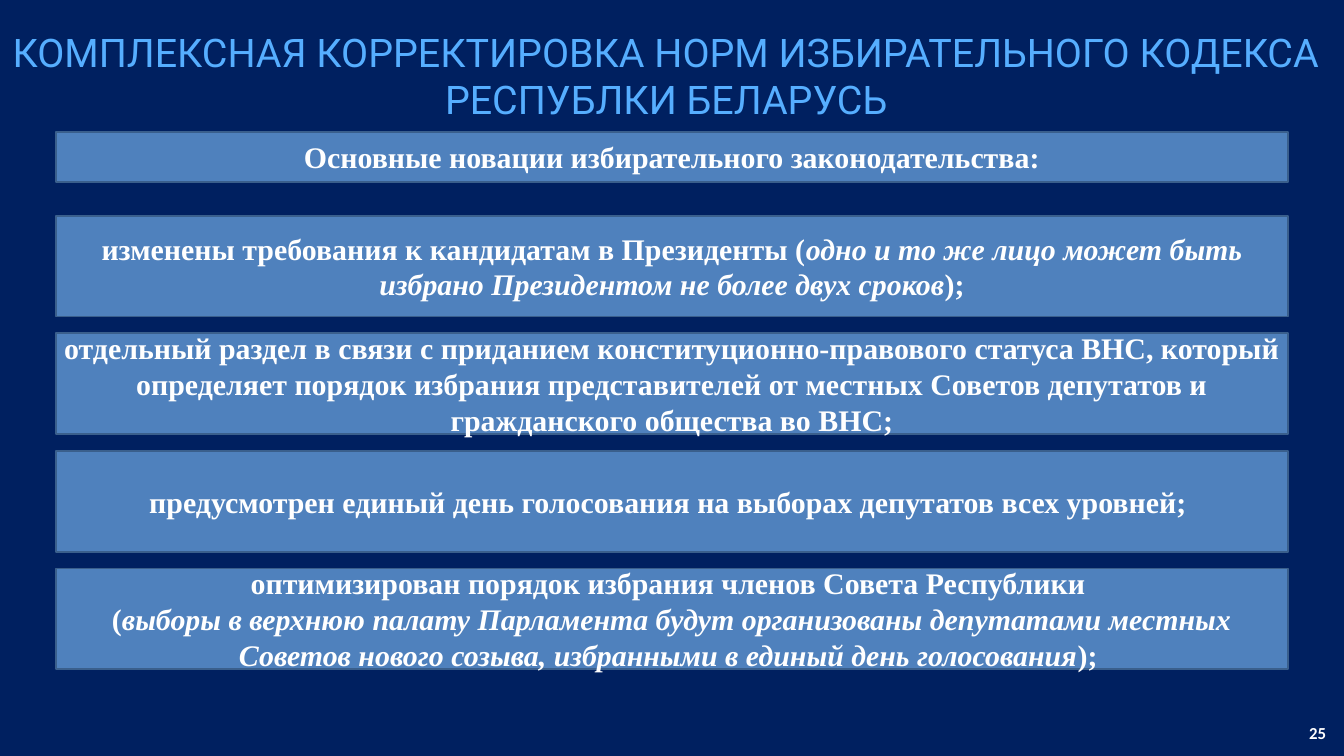
from dataclasses import dataclass

from pptx import Presentation
from pptx.dml.color import RGBColor
from pptx.enum.shapes import MSO_SHAPE
from pptx.enum.text import MSO_ANCHOR, MSO_AUTO_SIZE, PP_ALIGN
from pptx.util import Inches, Pt

RECTANGLE = MSO_SHAPE.RECTANGLE
TOP, MIDDLE = MSO_ANCHOR.TOP, MSO_ANCHOR.MIDDLE
CENTER, RIGHT = PP_ALIGN.CENTER, PP_ALIGN.RIGHT
GROW = MSO_AUTO_SIZE.SHAPE_TO_FIT_TEXT
TITLE_ONLY = 5

WIDTH, HEIGHT = Inches(20), Inches(11.25)
COLUMN, ROW = WIDTH / 24, HEIGHT / 45
HEADER_ROW, HEADER_ROWS = 7.84, 3
FIRST_ROW, CARD_ROWS, CARD_PITCH = 12.84, 6, 7


@dataclass(frozen=True)
class TypeStyle:
    name: str
    size: float
    color: str
    bold: bool = False


@dataclass(frozen=True)
class Theme:
    background: str = "002060"
    fill: str = "4F81BD"
    border: str = "3A5F8C"
    border_width: float = 2
    title: TypeStyle = TypeStyle("Roboto", 42.2, "56AEFF")
    title_spacing: float = 50.6
    card: TypeStyle = TypeStyle("Times New Roman", 32, "FFFFFF", True)
    number: TypeStyle = TypeStyle("Calibri", 18, "FFFFFF", True)


@dataclass(frozen=True)
class Area:
    column: float
    row: float
    columns: float
    rows: float

    def frame(self) -> dict[str, int]:
        return {
            "left": round(self.column * COLUMN),
            "top": round(self.row * ROW),
            "width": round(self.columns * COLUMN),
            "height": round(self.rows * ROW),
        }


@dataclass(frozen=True)
class Card:
    lead: str
    italic: str = ""
    tail: str = ""


THEME = Theme()
TITLE = "КОМПЛЕКСНАЯ КОРРЕКТИРОВКА НОРМ ИЗБИРАТЕЛЬНОГО КОДЕКСА РЕСПУБЛКИ БЕЛАРУСЬ"
HEADER = Card("Основные новации избирательного законодательства:")
CARDS = [
    Card(
        "изменены требования к кандидатам в Президенты (",
        "одно и то же лицо может быть избрано Президентом не более двух сроков",
        ");",
    ),
    Card(
        "отдельный раздел в связи с приданием конституционно-правового статуса ВНС, "
        "который определяет порядок избрания представителей от местных Советов "
        "депутатов и гражданского общества во ВНС;"
    ),
    Card("предусмотрен единый день голосования на выборах депутатов всех уровней; "),
    Card(
        "оптимизирован порядок избрания членов Совета Республики \n(",
        "выборы в верхнюю палату Парламента будут организованы депутатами местных "
        "Советов нового созыва, избранными в единый день голосования",
        "); ",
    ),
]


def set_all(target: object, values: dict) -> None:
    for name, value in values.items():
        setattr(target, name, value)


def add_span(para, text: str, style: TypeStyle, italic: bool = False) -> None:
    for index, line in enumerate(text.split("\n")):
        if index:
            para.add_line_break()
        span = para.add_run()
        span.text = line
        set_all(span.font, {
            "name": style.name,
            "size": Pt(style.size),
            "bold": style.bold,
            "italic": italic,
        })
        span.font.color.rgb = RGBColor.from_string(style.color)


def add_title(page) -> None:
    box = page.shapes.title
    set_all(box, Area(0, 1.68, 23.8, 5.68).frame())
    set_all(box.text_frame, {
        "margin_left": 0, "margin_top": 0, "margin_right": 0, "margin_bottom": 0,
        "vertical_anchor": TOP, "word_wrap": True, "auto_size": GROW,
    })
    para = box.text_frame.paragraphs[0]
    set_all(para, {"alignment": CENTER, "line_spacing": Pt(THEME.title_spacing)})
    add_span(para, TITLE, THEME.title)


def add_card(page, card: Card, row: float, rows: float) -> None:
    box = page.shapes.add_shape(RECTANGLE, **Area(1, row, 22, rows).frame())
    box.shadow.inherit = False
    box.fill.solid()
    box.fill.fore_color.rgb = RGBColor.from_string(THEME.fill)
    box.line.color.rgb = RGBColor.from_string(THEME.border)
    box.line.width = Pt(THEME.border_width)
    set_all(box.text_frame, {"vertical_anchor": MIDDLE, "word_wrap": True})
    para = box.text_frame.paragraphs[0]
    para.alignment = CENTER
    add_span(para, card.lead, THEME.card)
    if card.italic:
        add_span(para, card.italic, THEME.card, italic=True)
        add_span(para, card.tail, THEME.card)


def add_number(page, number: str) -> None:
    box = page.shapes.add_textbox(**Area(21, 42.84, 2.8, 1.6).frame())
    set_all(box.text_frame, {"vertical_anchor": MIDDLE, "word_wrap": True})
    para = box.text_frame.paragraphs[0]
    para.alignment = RIGHT
    add_span(para, number, THEME.number)


def main() -> None:
    deck = Presentation()
    set_all(deck, {"slide_width": WIDTH, "slide_height": HEIGHT})
    page = deck.slides.add_slide(deck.slide_layouts[TITLE_ONLY])
    page.background.fill.solid()
    page.background.fill.fore_color.rgb = RGBColor.from_string(THEME.background)
    add_title(page)
    add_card(page, HEADER, HEADER_ROW, HEADER_ROWS)
    for index, card in enumerate(CARDS):
        add_card(page, card, FIRST_ROW + index * CARD_PITCH, CARD_ROWS)
    add_number(page, "25")
    deck.save("out.pptx")


if __name__ == "__main__":
    main()
